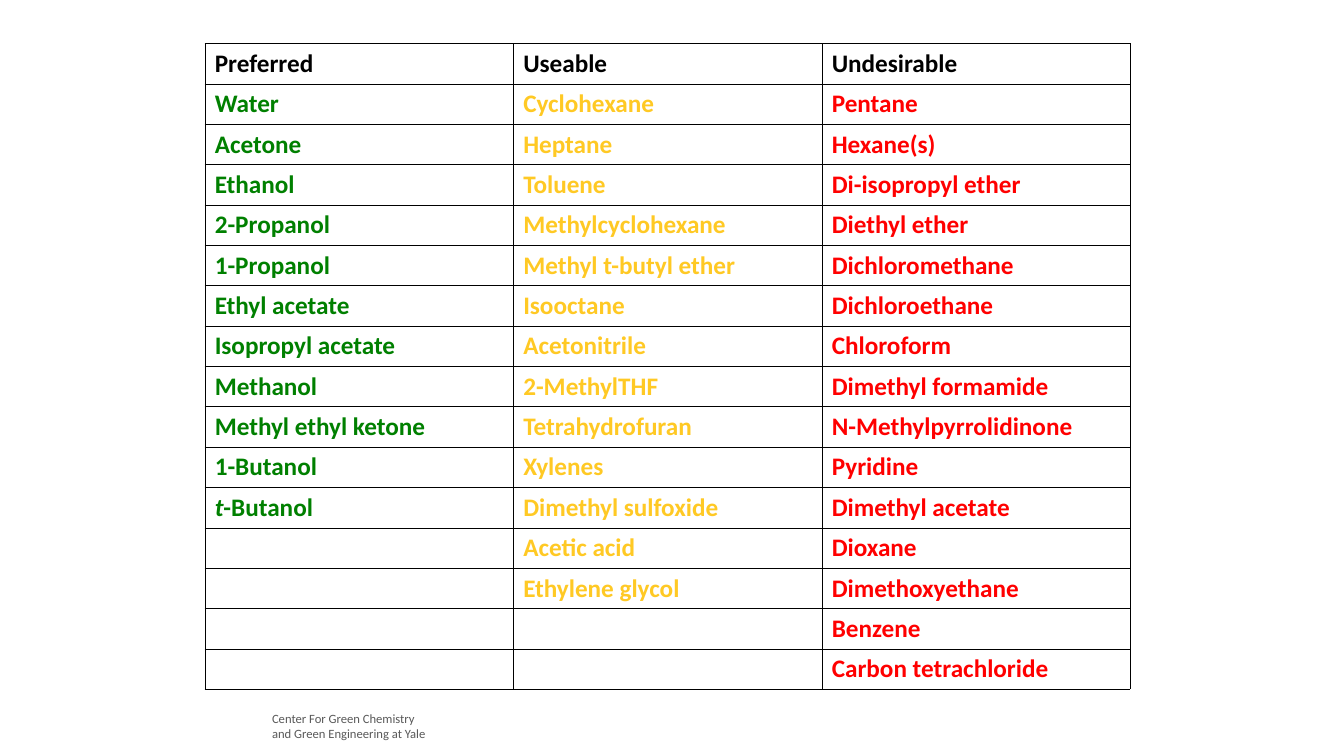
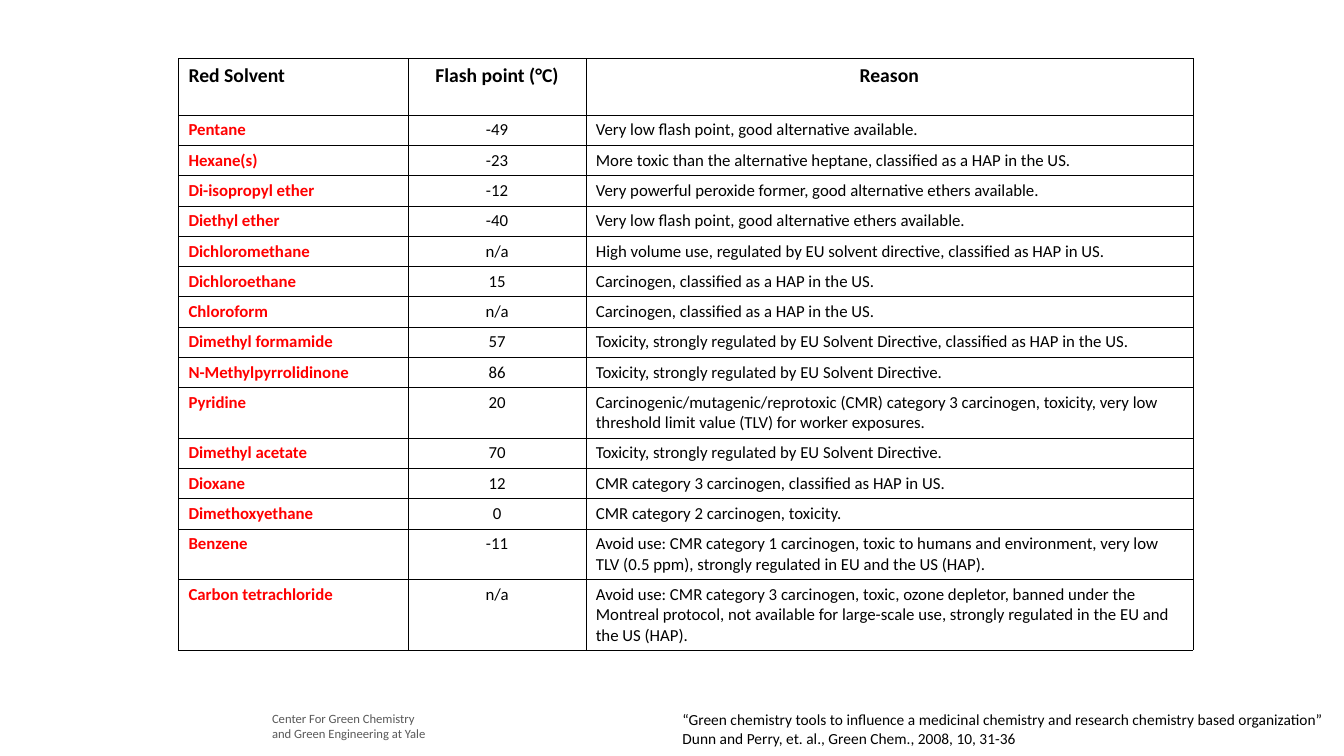
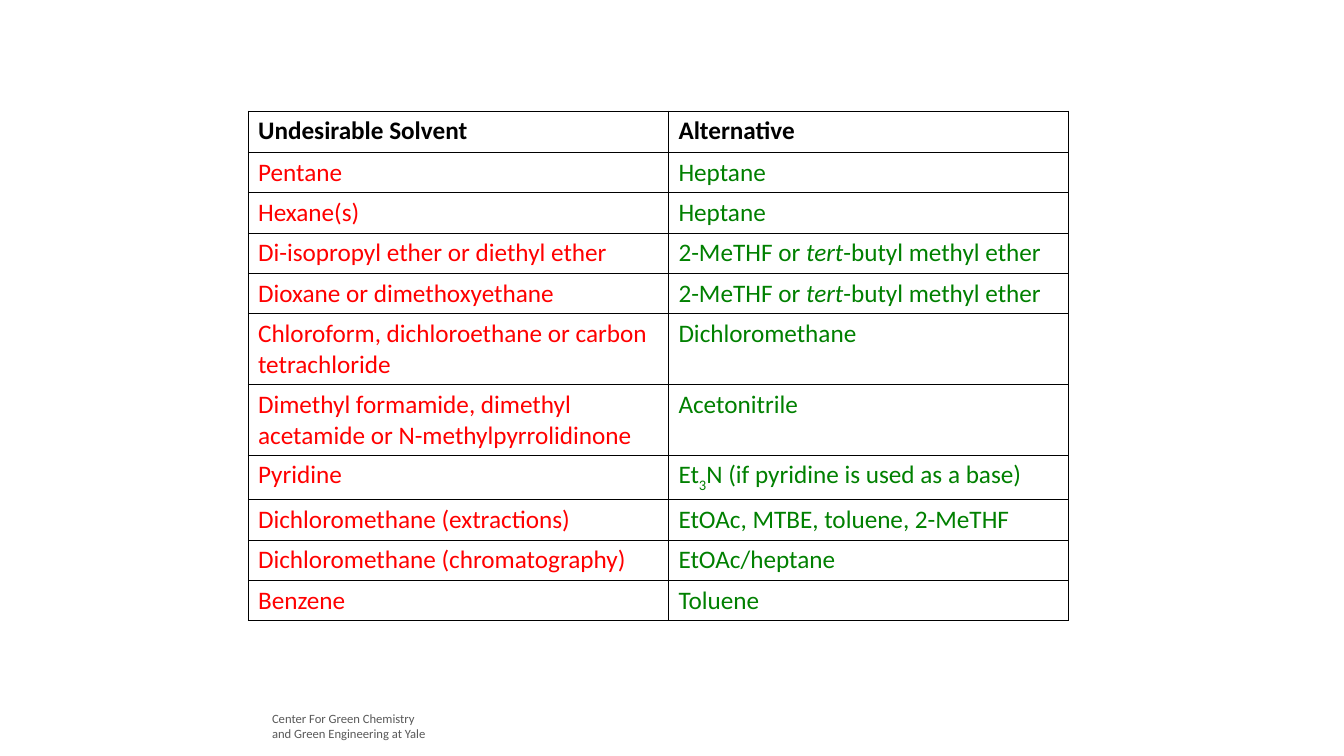
"""Build three slides of solvent selection tables."""

from dataclasses import dataclass, field

from lxml.etree import SubElement
from pptx import Presentation
from pptx.dml.color import RGBColor
from pptx.enum.text import MSO_AUTO_SIZE, PP_ALIGN
from pptx.oxml.ns import qn
from pptx.util import Inches, Pt

FONT = "Calibri"
BLACK = RGBColor(0x00, 0x00, 0x00)
WHITE = RGBColor(0xFF, 0xFF, 0xFF)
GRAY = RGBColor(0x59, 0x59, 0x59)
GREEN = RGBColor(0x00, 0x80, 0x00)
YELLOW = RGBColor(0xFF, 0xC9, 0x24)
RED = RGBColor(0xFF, 0x00, 0x00)
BORDER_WIDTH = Pt(0.25)
BLANK_LAYOUT = 6


@dataclass(frozen=True)
class Piece:
    """A stretch of text with its own style."""

    text: str
    italic: bool = False
    subscript: bool = False


Entry = str | tuple[Piece, ...]


@dataclass(frozen=True)
class Column:
    """One table column with its header and entries."""

    width: float
    header: str
    entries: tuple[Entry, ...]
    color: RGBColor = BLACK
    bold: bool = False
    header_alignment: PP_ALIGN = PP_ALIGN.LEFT
    alignment: PP_ALIGN = PP_ALIGN.LEFT


@dataclass(frozen=True)
class SolventTable:
    """Place, sizes and columns of one table."""

    left: float
    top: float
    columns: tuple[Column, ...]
    row_height: float
    header_size: int
    body_size: int
    special_heights: dict[int, float] = field(default_factory=dict)
    filled: bool = False


@dataclass(frozen=True)
class Note:
    """A small text box of several lines."""

    left: float
    top: float
    width: float
    height: float
    lines: tuple[str, ...]
    size: int
    color: RGBColor
    wrap: bool = True


FOOTER = Note(2.6, 7, 1.86, 0.4,
              ("Center For Green Chemistry", "and Green Engineering at Yale"), 9, GRAY)
CITATION = Note(
    6.67, 7, 6.61, 0.47,
    ("“Green chemistry tools to influence a medicinal chemistry and research chemistry based organization”",
     "Dunn and Perry, et. al., Green Chem., 2008, 10, 31-36"),
    11, BLACK, wrap=False)

PREFERRED = (
    "Water", "Acetone", "Ethanol", "2-Propanol", "1-Propanol", "Ethyl acetate",
    "Isopropyl acetate", "Methanol", "Methyl ethyl ketone", "1-Butanol",
    (Piece("t", italic=True), Piece("-Butanol")),
)
USEABLE = (
    "Cyclohexane", "Heptane", "Toluene", "Methylcyclohexane", "Methyl t-butyl ether",
    "Isooctane", "Acetonitrile", "2-MethylTHF", "Tetrahydrofuran", "Xylenes",
    "Dimethyl sulfoxide", "Acetic acid", "Ethylene glycol",
)
UNDESIRABLE = (
    "Pentane", "Hexane(s)", "Di-isopropyl ether", "Diethyl ether", "Dichloromethane",
    "Dichloroethane", "Chloroform", "Dimethyl formamide", "N-Methylpyrrolidinone",
    "Pyridine", "Dimethyl acetate", "Dioxane", "Dimethoxyethane", "Benzene",
    "Carbon tetrachloride",
)
FLASH_POINTS = ("-49", "-23", "-12", "-40", "n/a", "15", "n/a", "57", "86", "20",
                "70", "12", "0", "-11", "n/a")
CARCINOGEN = "Carcinogen, classified as a HAP in the US."
TOXICITY = "Toxicity, strongly regulated by EU Solvent Directive."
REASONS = (
    "Very low flash point, good alternative available.",
    "More toxic than the alternative heptane, classified as a HAP in the US.",
    "Very powerful peroxide former, good alternative ethers available.",
    "Very low flash point, good alternative ethers available.",
    "High volume use, regulated by EU solvent directive, classified as HAP in US.",
    CARCINOGEN,
    CARCINOGEN,
    "Toxicity, strongly regulated by EU Solvent Directive, classified as HAP in the US.",
    TOXICITY,
    "Carcinogenic/mutagenic/reprotoxic (CMR) category 3 carcinogen, toxicity, very low "
    "threshold limit value (TLV) for worker exposures.",
    TOXICITY,
    "CMR category 3 carcinogen, classified as HAP in US.",
    "CMR category 2 carcinogen, toxicity.",
    "Avoid use: CMR category 1 carcinogen, toxic to humans and environment, very low "
    "TLV (0.5 ppm), strongly regulated in EU and the US (HAP).",
    "Avoid use: CMR category 3 carcinogen, toxic, ozone depletor, banned under the "
    "Montreal protocol, not available for large-scale use, strongly regulated in the "
    "EU and the US (HAP).",
)
REPLACED = (
    "Pentane", "Hexane(s)", "Di-isopropyl ether or diethyl ether",
    "Dioxane or dimethoxyethane", "Chloroform, dichloroethane or carbon tetrachloride",
    "Dimethyl formamide, dimethyl acetamide or N-methylpyrrolidinone", "Pyridine",
    "Dichloromethane (extractions)", "Dichloromethane (chromatography)", "Benzene",
)
ETHER_CHOICE = (Piece("2-MeTHF or "), Piece("tert", italic=True), Piece("-butyl methyl ether"))
ALTERNATIVES = (
    "Heptane", "Heptane", ETHER_CHOICE, ETHER_CHOICE, "Dichloromethane", "Acetonitrile",
    (Piece("Et"), Piece("3", subscript=True), Piece("N (if pyridine is used as a base)")),
    "EtOAc, MTBE, toluene, 2-MeTHF", "EtOAc/heptane", "Toluene",
)

SELECTION_GUIDE = SolventTable(
    2.03, 0.43,
    (Column(3.06, "Preferred", PREFERRED, GREEN, bold=True),
     Column(3.06, "Useable", USEABLE, YELLOW, bold=True),
     Column(3.06, "Undesirable", UNDESIRABLE, RED, bold=True)),
    row_height=0.4, header_size=18, body_size=18)
RED_SOLVENT_REASONS = SolventTable(
    1.77, 0.58,
    (Column(2.28, "Red Solvent", UNDESIRABLE, RED, bold=True),
     Column(1.76, "Flash point (°C)", FLASH_POINTS,
            header_alignment=PP_ALIGN.CENTER, alignment=PP_ALIGN.CENTER),
     Column(6.02, "Reason", REASONS, header_alignment=PP_ALIGN.CENTER)),
    row_height=0.3, header_size=14, body_size=12,
    special_heights={0: 0.56, 10: 0.5, 14: 0.5, 15: 0.7})
REPLACEMENTS = SolventTable(
    2.46, 1.1,
    (Column(4.17, "Undesirable Solvent", REPLACED, RED),
     Column(3.96, "Alternative", ALTERNATIVES, GREEN)),
    row_height=0.4, header_size=18, body_size=18,
    special_heights={0: 0.41, 5: 0.7, 6: 0.7, 7: 0.43}, filled=True)


def format_font(font, size: int, color: RGBColor, bold: bool = False) -> None:
    """Apply the shared typeface with a size, colour and weight."""
    for name, value in {"name": FONT, "size": Pt(size), "bold": bold}.items():
        setattr(font, name, value)
    font.color.rgb = color


def add_note(slide, note: Note):
    """Add a text box with one paragraph per line."""
    box = slide.shapes.add_textbox(*map(Inches, (note.left, note.top, note.width, note.height)))
    frame = box.text_frame
    frame.word_wrap = note.wrap
    frame.auto_size = MSO_AUTO_SIZE.SHAPE_TO_FIT_TEXT
    frame.text = "\n".join(note.lines)
    for paragraph in frame.paragraphs:
        for run in paragraph.runs:
            format_font(run.font, note.size, note.color)
    return box


def draw_borders(cell) -> None:
    """Draw a thin black line on all four sides of a cell."""
    properties = cell._tc.get_or_add_tcPr()
    for side in ("a:lnL", "a:lnR", "a:lnT", "a:lnB"):
        line = SubElement(properties, qn(side), w=str(BORDER_WIDTH))
        fill = SubElement(line, qn("a:solidFill"))
        SubElement(fill, qn("a:srgbClr"), val=str(BLACK))


def fill_cell(cell, entry: Entry, size: int, color: RGBColor, bold: bool,
              alignment: PP_ALIGN, filled: bool) -> None:
    """Write and format one table cell."""
    draw_borders(cell)
    if filled:
        cell.fill.solid()
        cell.fill.fore_color.rgb = WHITE
    else:
        cell.fill.background()
    paragraph = cell.text_frame.paragraphs[0]
    paragraph.alignment = alignment
    if not entry:
        paragraph.font.size = Pt(size)
        return
    for piece in (Piece(entry),) if isinstance(entry, str) else entry:
        run = paragraph.add_run()
        run.text = piece.text
        format_font(run.font, size, color, bold)
        run.font.italic = piece.italic
        if piece.subscript:
            run._r.get_or_add_rPr().set("baseline", "-25000")


def add_solvent_table(slide, layout: SolventTable) -> None:
    """Add a bordered table built column by column."""
    row_count = 1 + max(len(column.entries) for column in layout.columns)
    heights = [layout.special_heights.get(row, layout.row_height) for row in range(row_count)]
    width = sum(column.width for column in layout.columns)
    table = slide.shapes.add_table(
        row_count, len(layout.columns),
        *map(Inches, (layout.left, layout.top, width, sum(heights)))).table
    for name in ("first_row", "horz_banding"):
        setattr(table, name, False)
    for row, height in zip(table.rows, heights):
        row.height = Inches(height)
    for index, column in enumerate(layout.columns):
        table.columns[index].width = Inches(column.width)
        fill_cell(table.cell(0, index), column.header, layout.header_size, BLACK, True,
                  column.header_alignment, layout.filled)
        for row in range(1, row_count):
            entry = column.entries[row - 1] if row <= len(column.entries) else ""
            fill_cell(table.cell(row, index), entry, layout.body_size, column.color,
                      column.bold, column.alignment, layout.filled)


def main() -> None:
    """Build and save the presentation."""
    presentation = Presentation()
    presentation.slide_width = Inches(13.33)
    presentation.slide_height = Inches(7.5)
    blank_layout = presentation.slide_layouts[BLANK_LAYOUT]
    slides = []
    for table in (SELECTION_GUIDE, RED_SOLVENT_REASONS, REPLACEMENTS):
        slide = presentation.slides.add_slide(blank_layout)
        add_note(slide, FOOTER)
        add_solvent_table(slide, table)
        slides.append(slide)
    add_note(slides[1], CITATION)
    presentation.save("out.pptx")


if __name__ == "__main__":
    main()
